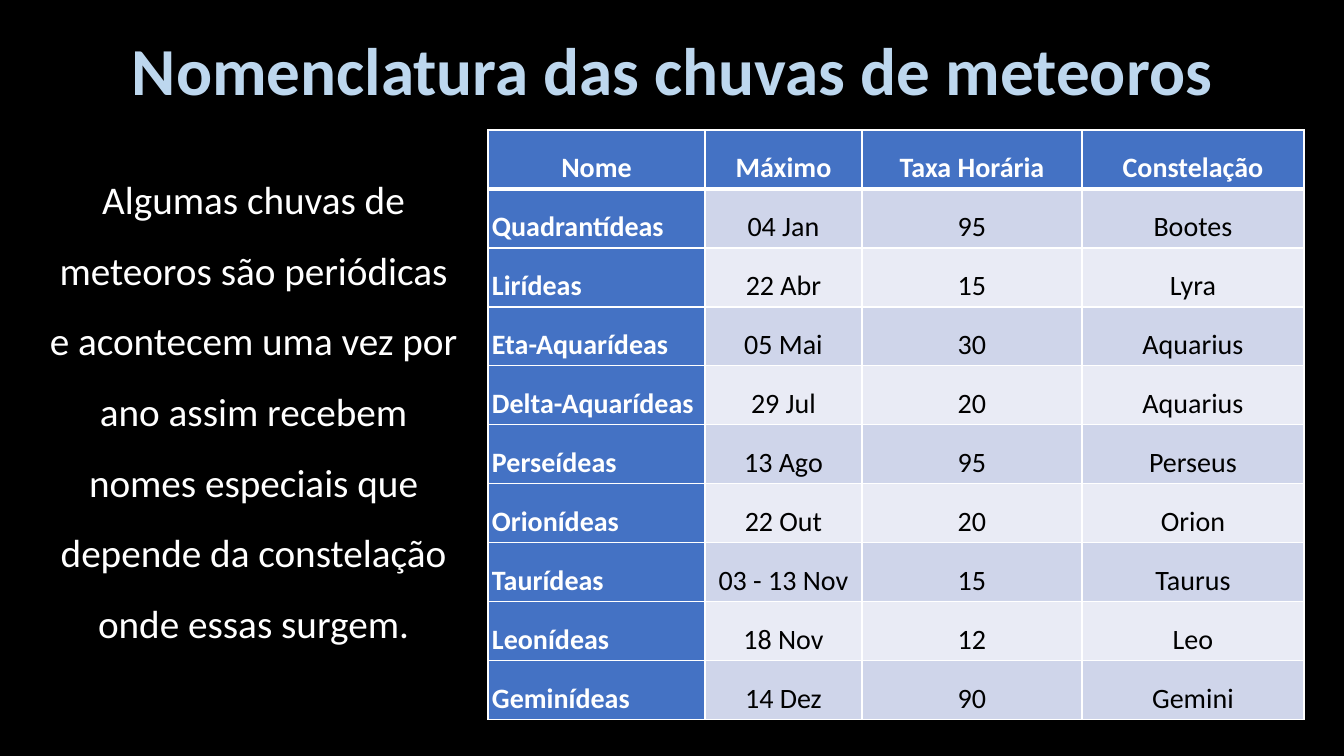
from dataclasses import dataclass

from lxml.etree import SubElement
from pptx import Presentation
from pptx.dml.color import RGBColor
from pptx.enum.text import MSO_ANCHOR, PP_ALIGN
from pptx.oxml.ns import qn
from pptx.util import Emu, Pt

EMU_PER_PX = 914400 / 100.8


def px(n):
    return Emu(round(n * EMU_PER_PX))


@dataclass(frozen=True)
class Theme:
    font: str = "Calibri"
    background: str = "000000"
    title: str = "BDD7EE"
    light: str = "FFFFFF"
    dark: str = "000000"
    accent: str = "4472C4"
    bands: tuple = ("CFD5EA", "E9EBF5")
    title_size: int = 48
    body_size: int = 28
    table_size: int = 20


class SlideBuilder:
    def __init__(self, slide, theme):
        self.slide = slide
        self.theme = theme
        fill = slide.background.fill
        fill.solid()
        fill.fore_color.rgb = RGBColor.from_string(theme.background)

    def style(self, p, size, color, bold=False, align=PP_ALIGN.CENTER, spacing=1.5):
        p.alignment = align
        p.line_spacing = spacing
        p.font.name = self.theme.font
        p.font.size = Pt(size)
        p.font.bold = bold
        p.font.color.rgb = RGBColor.from_string(color)

    def text(self, box, text, size, color, anchor=MSO_ANCHOR.TOP, **style):
        tf = self.slide.shapes.add_textbox(*map(px, box)).text_frame
        tf.word_wrap = True
        tf.vertical_anchor = anchor
        p = tf.paragraphs[0]
        p.text = text
        self.style(p, size, color, **style)

    def borders(self, cell, **widths):
        """Draw light cell borders; widths are points keyed by side (L, R, T, B)."""
        tc_pr = cell._tc.get_or_add_tcPr()
        for side in "LRTB":
            ln = SubElement(tc_pr, qn(f"a:ln{side}"), w=str(Pt(widths.get(side, 1))))
            fill = SubElement(ln, qn("a:solidFill"))
            SubElement(fill, qn("a:srgbClr"), val=self.theme.light)

    def cell(self, cell, text, row, col):
        t = self.theme
        heading = row == 0 or col == 0
        cell.margin_left = cell.margin_right = px(4)
        cell.margin_top = cell.margin_bottom = px(4)
        cell.vertical_anchor = MSO_ANCHOR.MIDDLE if row == 0 else MSO_ANCHOR.BOTTOM
        self.borders(cell, T=3 if row == 1 else 1, B=3 if row == 0 else 1)
        cell.fill.solid()
        color = t.accent if heading else t.bands[(row - 1) % 2]
        cell.fill.fore_color.rgb = RGBColor.from_string(color)
        p = cell.text_frame.paragraphs[0]
        p.text = text
        self.style(p, t.table_size, t.light if heading else t.dark, bold=heading,
                   align=PP_ALIGN.LEFT if row and col == 0 else PP_ALIGN.CENTER)

    def table(self, left, top, widths, row_height, rows):
        frame = self.slide.shapes.add_table(
            len(rows), len(widths), px(left), px(top),
            px(sum(widths)), px(row_height * len(rows)))
        table = frame.table
        table.first_col = True
        for column, width in zip(table.columns, widths):
            column.width = px(width)
        for i, values in enumerate(rows):
            table.rows[i].height = px(row_height)
            for j, value in enumerate(values):
                self.cell(table.cell(i, j), value, i, j)


SHOWERS = [
    ("Nome", "Máximo", "Taxa Horária", "Constelação"),
    ("Quadrantídeas", "04 Jan", "95", "Bootes"),
    ("Lirídeas", "22 Abr", "15", "Lyra"),
    ("Eta-Aquarídeas", "05 Mai", "30", "Aquarius"),
    ("Delta-Aquarídeas", "29 Jul", "20", "Aquarius"),
    ("Perseídeas", "13 Ago", "95", "Perseus"),
    ("Orionídeas", "22 Out", "20", "Orion"),
    ("Taurídeas", "03 - 13 Nov", "15", "Taurus"),
    ("Leonídeas", "18 Nov", "12", "Leo"),
    ("Geminídeas", "14 Dez", "90", "Gemini"),
]


def main():
    prs = Presentation()
    prs.slide_width, prs.slide_height = px(1344), px(756)
    theme = Theme()
    s = SlideBuilder(prs.slides.add_slide(prs.slide_layouts[6]), theme)
    s.text((93, 1, 1159, 146), "Nomenclatura das chuvas de meteoros",
           theme.title_size, theme.title, MSO_ANCHOR.MIDDLE, bold=True, spacing=0.9)
    s.text((39, 147, 429, 582),
           "Algumas chuvas de meteoros são periódicas e acontecem uma vez por ano "
           "assim recebem nomes especiais que depende da constelação onde essas surgem.",
           theme.body_size, theme.light)
    s.table(488, 130, (217, 157, 220, 222), 59, SHOWERS)
    prs.save("out.pptx")


if __name__ == "__main__":
    main()
